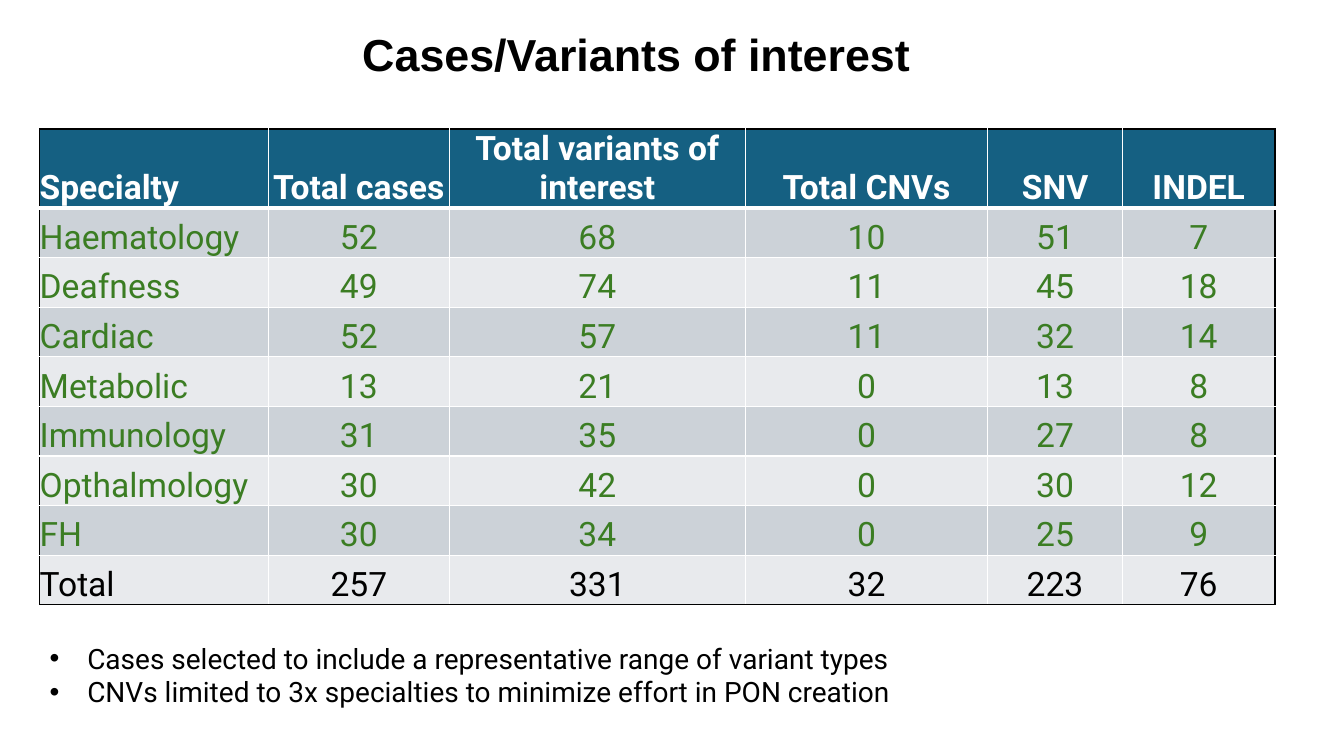
from lxml.etree import SubElement
from pptx import Presentation
from pptx.dml.color import RGBColor
from pptx.enum.text import MSO_ANCHOR, PP_ALIGN
from pptx.oxml.ns import qn
from pptx.util import Cm, Pt

COLOURS = {
    "header": "156082",
    "band_dark": "CCD2D8",
    "band_light": "E8EAED",
    "specialty": "3B7D23",
    "white": "FFFFFF",
    "black": "000000",
}
COLUMN_WIDTHS = (5.77, 4.55, 7.47, 6.1, 3.4, 3.84)
ROW_HEIGHT = 1.25
CASES = (
    ("Specialty", "Total cases", "Total variants of interest", "Total CNVs", "SNV", "INDEL"),
    ("Haematology", 52, 68, 10, 51, 7),
    ("Deafness", 49, 74, 11, 45, 18),
    ("Cardiac", 52, 57, 11, 32, 14),
    ("Metabolic", 13, 21, 0, 13, 8),
    ("Immunology", 31, 35, 0, 27, 8),
    ("Opthalmology", 30, 42, 0, 30, 12),
    ("FH", 30, 34, 0, 25, 9),
    ("Total", 257, 331, 32, 223, 76),
)
REMARKS = (
    "Cases selected to include a representative range of variant types",
    "CNVs limited to 3x specialties to minimize effort in PON creation",
)


def format_runs(paragraph, font_name, size, colour, bold=False):
    """Give every run of a paragraph the same font."""
    for run in paragraph.runs:
        run.font.name = font_name
        run.font.size = Pt(size)
        run.font.bold = bold
        run.font.color.rgb = RGBColor.from_string(COLOURS[colour])


def add_border(cell, side, colour, width=1):
    """Draw one side of a cell's border; side is L, R, T or B."""
    border = SubElement(cell._tc.get_or_add_tcPr(), qn(f"a:ln{side}"), w=str(Pt(width)))
    fill = SubElement(border, qn("a:solidFill"))
    SubElement(fill, qn("a:srgbClr"), val=COLOURS[colour])


def style_cell(cell, row, column):
    """Apply border, fill and text format by position in the table."""
    last_row, last_column = len(CASES) - 1, len(COLUMN_WIDTHS) - 1
    is_header = row == 0
    outer_sides = {"L": column == 0, "R": column == last_column,
                   "T": is_header, "B": row == last_row}
    for side, is_outer in outer_sides.items():
        width = 3 if is_header and side == "B" else 1
        add_border(cell, side, "black" if is_outer else "white", width)

    band = "header" if is_header else "band_dark" if row % 2 else "band_light"
    cell.fill.solid()
    cell.fill.fore_color.rgb = RGBColor.from_string(COLOURS[band])
    cell.margin_left = cell.margin_right = cell.margin_top = cell.margin_bottom = 0
    cell.vertical_anchor = MSO_ANCHOR.BOTTOM

    paragraph = cell.text_frame.paragraphs[0]
    paragraph.alignment = PP_ALIGN.CENTER if column else PP_ALIGN.LEFT
    ink = "white" if is_header else "black" if row == last_row else "specialty"
    format_runs(paragraph, "Roboto", 24, ink, is_header)


def add_case_table(slide):
    """Add the table of cases and variants by specialty."""
    table = slide.shapes.add_table(
        len(CASES), len(COLUMN_WIDTHS), Cm(1), Cm(3.25),
        Cm(sum(COLUMN_WIDTHS)), Cm(ROW_HEIGHT * len(CASES))).table
    for column, width in zip(table.columns, COLUMN_WIDTHS):
        column.width = Cm(width)
    for row, entries in enumerate(CASES):
        for column, entry in enumerate(entries):
            cell = table.cell(row, column)
            cell.text_frame.text = str(entry)
            style_cell(cell, row, column)


def add_text(slide, left, top, width, height, text):
    """Add a wrapping text box and return its paragraphs."""
    box = slide.shapes.add_textbox(Cm(left), Cm(top), Cm(width), Cm(height))
    box.text_frame.word_wrap = True
    box.text_frame.text = text
    return box.text_frame.paragraphs


def add_title(slide, text):
    """Add the centred slide title."""
    for paragraph in add_text(slide, 3.63, 0.56, 24.82, 1.63, text):
        paragraph.alignment = PP_ALIGN.CENTER
        format_runs(paragraph, "Arial", 32, "black", True)


def add_remarks(slide, remarks):
    """Add the bulleted remarks below the table."""
    indent = Cm(0.95)
    for paragraph in add_text(slide, 1, 16.03, 31.1, 1.96, "\n".join(remarks)):
        format_runs(paragraph, "Roboto", 20, "black")
        properties = paragraph._p.get_or_add_pPr()
        properties.set("marL", str(indent))
        properties.set("indent", str(-indent))
        SubElement(properties, qn("a:buFont"), typeface="Arial")
        SubElement(properties, qn("a:buChar"), char="•")


def main():
    """Build and save the slide."""
    presentation = Presentation()
    presentation.slide_width = Cm(33.87)
    presentation.slide_height = Cm(19.05)
    slide = presentation.slides.add_slide(presentation.slide_layouts[6])
    add_case_table(slide)
    add_remarks(slide, REMARKS)
    add_title(slide, "Cases/Variants of interest")
    presentation.save("out.pptx")


if __name__ == "__main__":
    main()
